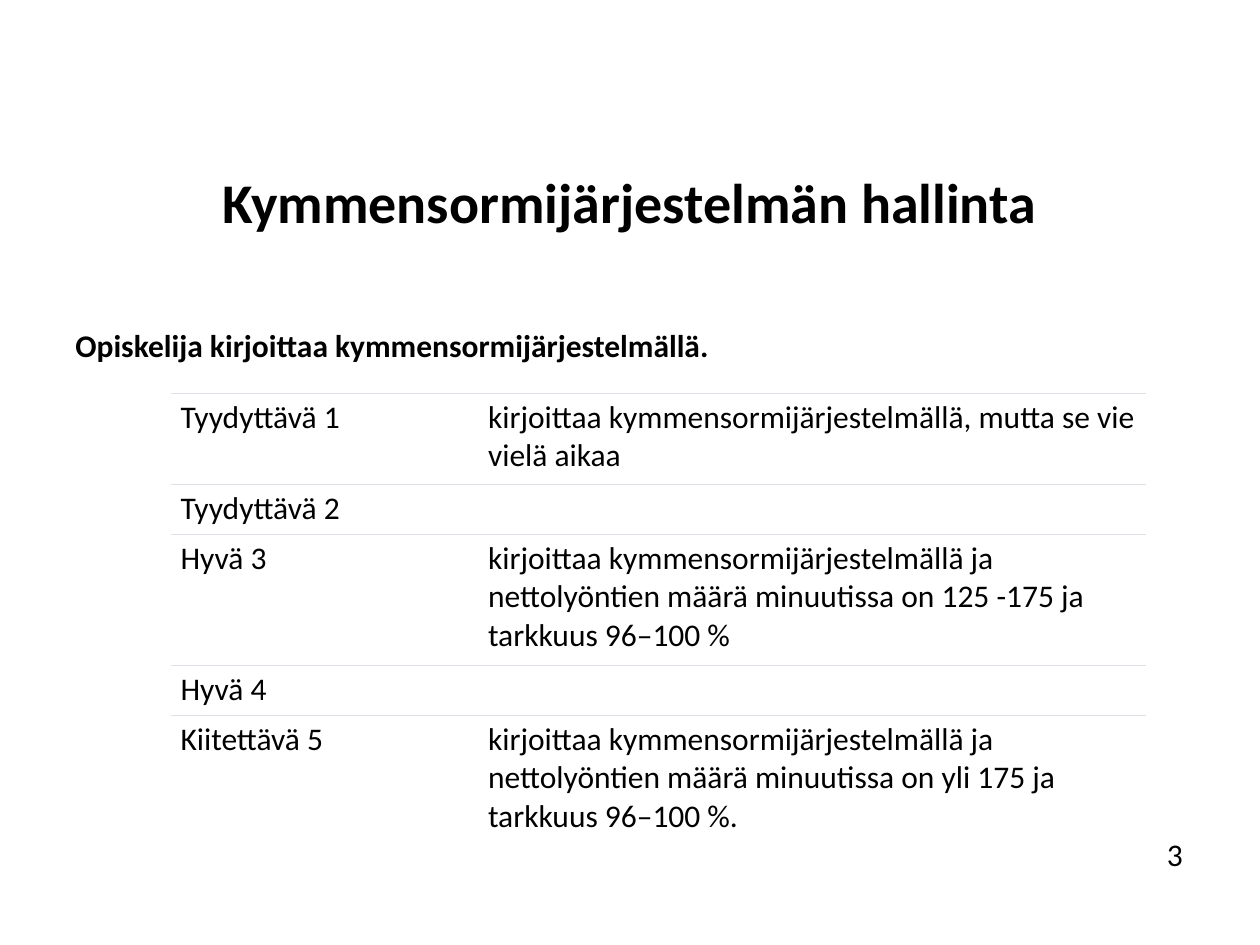
from lxml.etree import SubElement
from pptx import Presentation
from pptx.dml.color import RGBColor
from pptx.enum.text import MSO_ANCHOR, PP_ALIGN
from pptx.oxml.ns import qn
from pptx.util import Cm, Pt

FONT = "Calibri"
BLACK = "000000"
RULE = "DEE2E6"

GRADES = [
    ("Tyydyttävä 1", "kirjoittaa kymmensormijärjestelmällä, mutta se vie vielä aikaa"),
    ("Tyydyttävä 2", ""),
    ("Hyvä 3", "kirjoittaa kymmensormijärjestelmällä ja nettolyöntien määrä "
               "minuutissa on 125 -175 ja tarkkuus 96–100 %"),
    ("Hyvä 4", ""),
    ("Kiitettävä 5", "kirjoittaa kymmensormijärjestelmällä ja nettolyöntien määrä "
                     "minuutissa on yli 175 ja tarkkuus 96–100 %."),
]
ROW_HEIGHTS = [1.83, 1.01, 2.64, 1.01, 2.64]
COLUMN_WIDTHS = [6.2, 13.46]


def color(hex_code):
    return RGBColor.from_string(hex_code)


def format_text(frame, size, bold=False, align=PP_ALIGN.LEFT):
    for paragraph in frame.paragraphs:
        paragraph.alignment = align
        for run in paragraph.runs:
            run.font.name = FONT
            run.font.size = Pt(size)
            run.font.bold = bold
            run.font.color.rgb = color(BLACK)


def add_text(slide, text, left, top, width, height, size,
             bold=False, align=PP_ALIGN.LEFT, anchor=MSO_ANCHOR.TOP):
    frame = slide.shapes.add_textbox(Cm(left), Cm(top), Cm(width), Cm(height)).text_frame
    frame.word_wrap = True
    frame.vertical_anchor = anchor
    frame.text = text
    format_text(frame, size, bold, align)


def set_borders(cell, ruled_sides):
    """Rule the given sides (of L, R, T, B) and clear the others."""
    properties = cell._tc.get_or_add_tcPr()
    for side in "LRTB":
        line = SubElement(properties, qn(f"a:ln{side}"), w=str(Pt(0.75)))
        if side in ruled_sides:
            fill = SubElement(line, qn("a:solidFill"))
            SubElement(fill, qn("a:srgbClr"), val=RULE)
        else:
            SubElement(line, qn("a:noFill"))


def add_grade_table(slide, left, top):
    table = slide.shapes.add_table(
        len(GRADES), len(COLUMN_WIDTHS), Cm(left), Cm(top),
        Cm(sum(COLUMN_WIDTHS)), Cm(sum(ROW_HEIGHTS))).table
    table.first_row = table.horz_banding = False
    for column, width in zip(table.columns, COLUMN_WIDTHS):
        column.width = Cm(width)
    for index, (row, height, grade) in enumerate(zip(table.rows, ROW_HEIGHTS, GRADES)):
        row.height = Cm(height)
        is_last = index == len(GRADES) - 1
        for cell, text in zip(row.cells, grade):
            cell.margin_left = cell.margin_right = Cm(0.19)
            cell.margin_top = cell.margin_bottom = Cm(0.1)
            cell.text = text
            format_text(cell.text_frame, 18)
            set_borders(cell, "T" if is_last else "TB")
            cell.fill.background()


def main():
    presentation = Presentation()
    presentation.slide_width, presentation.slide_height = Cm(25.4), Cm(19.05)
    slide = presentation.slides.add_slide(presentation.slide_layouts[6])
    add_text(slide, "Kymmensormijärjestelmän hallinta", 1.27, 2.97, 22.86, 2.16, 32,
             bold=True, align=PP_ALIGN.CENTER, anchor=MSO_ANCHOR.MIDDLE)
    add_text(slide, "Opiskelija kirjoittaa kymmensormijärjestelmällä.",
             1.27, 6.45, 23.16, 10.44, 18, bold=True)
    add_text(slide, "3", 22.25, 16.71, 2.87, 1.02, 18, align=PP_ALIGN.CENTER)
    add_grade_table(slide, 3.45, 7.93)
    presentation.save("out.pptx")


if __name__ == "__main__":
    main()
